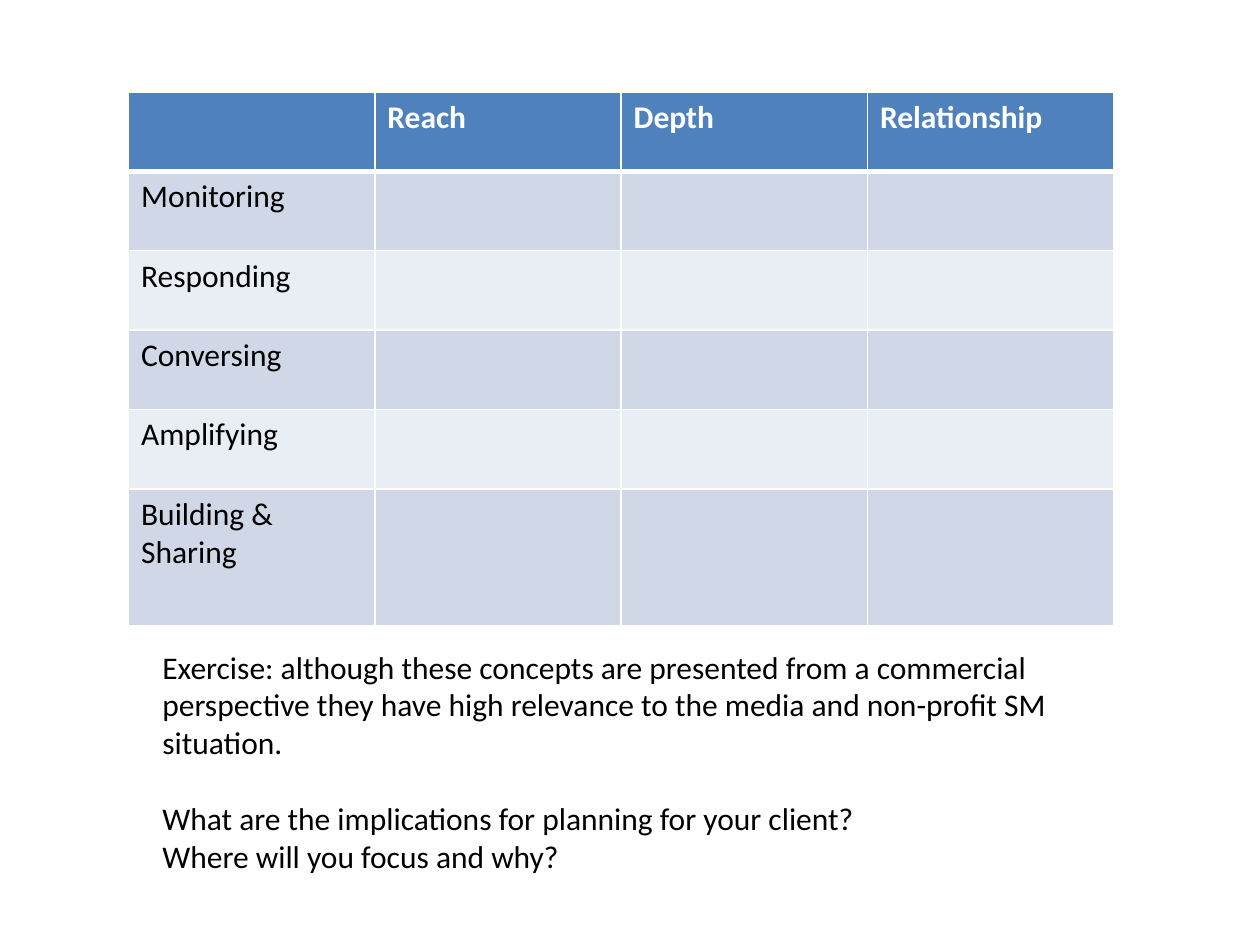
from lxml.etree import SubElement
from pptx import Presentation
from pptx.dml.color import RGBColor
from pptx.enum.text import MSO_AUTO_SIZE
from pptx.oxml.ns import qn
from pptx.util import Inches, Pt

WHITE = RGBColor(0xFF, 0xFF, 0xFF)
BLACK = RGBColor(0x00, 0x00, 0x00)
HEADER_BLUE = RGBColor(0x4F, 0x81, 0xBD)
BANDS = (RGBColor(0xD0, 0xD8, 0xE8), RGBColor(0xE9, 0xED, 0xF4))
FONT = "Calibri"
SIZE = Pt(18)

HEADINGS = ["", "Reach", "Depth", "Relationship"]
ACTIVITIES = ["Monitoring", "Responding", "Conversing", "Amplifying",
              "Building &\nSharing"]
EXERCISE = [
    "Exercise: although these concepts are presented from a commercial",
    "perspective they have high relevance to the media and non-profit SM",
    "situation.",
]
QUESTIONS = [
    "What are the implications for planning for your client?",
    "Where will you focus and why?",
]


def add_lines(tf, lines, color, bold=False):
    """Write one paragraph per line and return the paragraphs."""
    paragraphs = []
    for i, line in enumerate(lines):
        p = tf.add_paragraph() if i else tf.paragraphs[0]
        r = p.add_run()
        r.text = line
        r.font.name = FONT
        r.font.size = SIZE
        r.font.bold = bold
        r.font.color.rgb = color
        paragraphs.append(p)
    return paragraphs


def set_borders(cell, top, bottom):
    """Draw white borders; top and bottom are widths in points."""
    tc_pr = cell._tc.get_or_add_tcPr()
    for side, width in (("L", 1), ("R", 1), ("T", top), ("B", bottom)):
        ln = SubElement(tc_pr, qn(f"a:ln{side}"), w=str(Pt(width)))
        fill = SubElement(ln, qn("a:solidFill"))
        SubElement(fill, qn("a:srgbClr"), val=str(WHITE))


def add_activity_table(s, left, top, width, row_height, last_height):
    rows = [HEADINGS] + [[name, "", "", ""] for name in ACTIVITIES]
    height = row_height * (len(rows) - 1) + last_height
    table = s.shapes.add_table(len(rows), len(HEADINGS),
                               left, top, width, height).table
    for row in table.rows:
        row.height = row_height
    table.rows[len(rows) - 1].height = last_height

    for i, row in enumerate(rows):
        header = i == 0
        for j, text in enumerate(row):
            cell = table.cell(i, j)
            set_borders(cell, 3 if i == 1 else 1, 3 if header else 1)
            cell.fill.solid()
            cell.fill.fore_color.rgb = HEADER_BLUE if header else BANDS[(i - 1) % 2]
            if text:
                add_lines(cell.text_frame, text.split("\n"),
                          WHITE if header else BLACK, header)


def add_exercise(s, left, top, width, height):
    tf = s.shapes.add_textbox(left, top, width, height).text_frame
    tf.word_wrap = False
    tf.auto_size = MSO_AUTO_SIZE.SHAPE_TO_FIT_TEXT
    paragraphs = add_lines(tf, EXERCISE + QUESTIONS, BLACK)
    paragraphs[len(EXERCISE)].space_before = Pt(22)


def main():
    prs = Presentation()
    prs.slide_width = Inches(10)
    prs.slide_height = Inches(7.5)
    s = prs.slides.add_slide(prs.slide_layouts[6])
    add_activity_table(s, Inches(1.02), Inches(0.73), Inches(7.82),
                       Inches(0.63), Inches(1.09))
    add_exercise(s, Inches(1.19), Inches(5.09), Inches(7.32), Inches(1.92))
    prs.save("out.pptx")


if __name__ == "__main__":
    main()
